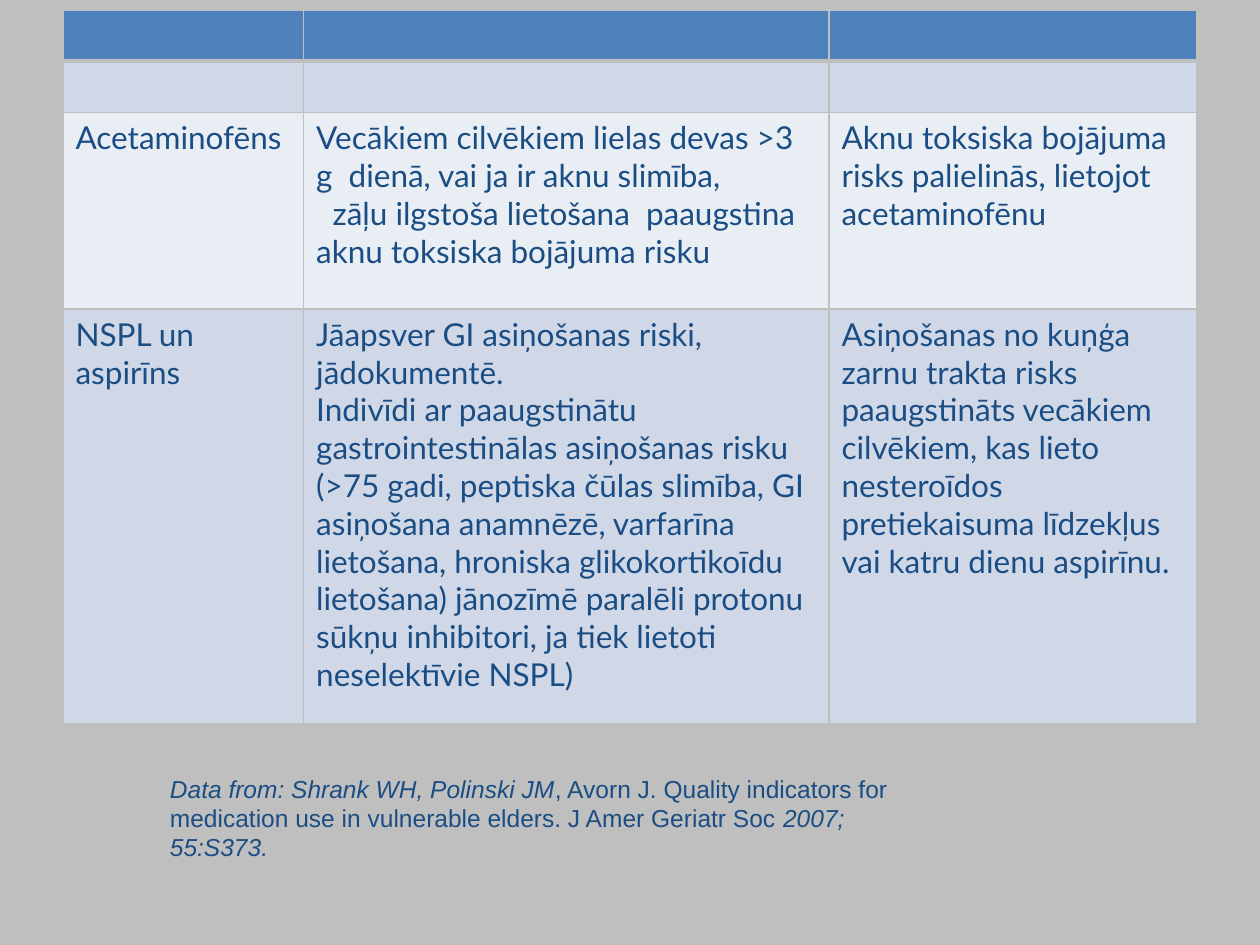
from lxml.etree import SubElement
from pptx import Presentation
from pptx.dml.color import RGBColor
from pptx.enum.text import MSO_AUTO_SIZE
from pptx.oxml.ns import qn
from pptx.util import Inches, Pt

COLORS = {
    "background": "BFBFBF",
    "text": "1A4D83",
    "header": "4F81BD",
    "band_dark": "D0D8E8",
    "band_light": "E9EDF4",
}
COLUMN_WIDTHS = [1.91, 4.17, 2.92]
ROW_HEIGHTS = [0.4, 0.4, 1.56, 3.29]
ROW_FILLS = ["header", "band_dark", "band_light", "band_dark"]
EMPTY_ROW = [[""], [""], [""]]
DRUG_ROWS = [
    EMPTY_ROW,
    EMPTY_ROW,
    [
        ["Acetaminofēns"],
        ["Vecākiem cilvēkiem lielas devas >3 g  dienā, vai ja ir aknu slimība,",
         "zāļu ilgstoša lietošana  paaugstina aknu toksiska bojājuma risku"],
        ["Aknu toksiska bojājuma risks palielinās, lietojot acetaminofēnu"],
    ],
    [
        ["NSPL un aspirīns"],
        ["Jāapsver GI asiņošanas riski, jādokumentē.",
         "Indivīdi ar paaugstinātu gastrointestinālas asiņošanas risku "
         "(>75 gadi, peptiska čūlas slimība, GI asiņošana anamnēzē, varfarīna "
         "lietošana, hroniska glikokortikoīdu lietošana) jānozīmē paralēli "
         "protonu sūkņu inhibitori, ja tiek lietoti neselektīvie NSPL)"],
        ["Asiņošanas no kuņģa zarnu trakta risks paaugstināts vecākiem "
         "cilvēkiem, kas lieto nesteroīdos pretiekaisuma līdzekļus",
         "vai katru dienu aspirīnu."],
    ],
]
CITATION = [
    ("Data from: Shrank WH, Polinski JM", True),
    (", Avorn J. Quality indicators for medication use in vulnerable elders. "
     "J Amer Geriatr Soc ", False),
    ("2007; 55:S373.", True),
]


class SlideBuilder:
    def __init__(self, deck):
        self.slide = deck.slides.add_slide(deck.slide_layouts[6])
        self.fill(self.slide.background.fill, "background")

    def fill(self, fill, color):
        fill.solid()
        fill.fore_color.rgb = RGBColor.from_string(COLORS[color])

    def style(self, font, name, size, italic=None):
        font.name, font.size, font.italic = name, Pt(size), italic
        font.color.rgb = RGBColor.from_string(COLORS["text"])

    def borders(self, cell, bottom_width):
        """Draw the four cell borders; they must precede the cell fill."""
        properties = cell._tc.get_or_add_tcPr()
        for side, width in (("L", 1), ("R", 1), ("T", 1), ("B", bottom_width)):
            line = SubElement(properties, qn(f"a:ln{side}"), w=str(Pt(width)))
            solid = SubElement(line, qn("a:solidFill"))
            SubElement(solid, qn("a:srgbClr"), val=COLORS["background"])

    def table(self, rows, left, top):
        frame = self.slide.shapes.add_table(
            len(rows), len(COLUMN_WIDTHS), Inches(left), Inches(top),
            Inches(sum(COLUMN_WIDTHS)), Inches(sum(ROW_HEIGHTS)))
        table = frame.table
        for column, width in zip(table.columns, COLUMN_WIDTHS):
            column.width = Inches(width)
        for index, (row, height) in enumerate(zip(table.rows, ROW_HEIGHTS)):
            row.height = Inches(height)
            for cell, lines in zip(row.cells, rows[index]):
                self.borders(cell, 3 if index == 0 else 1)
                self.fill(cell.fill, ROW_FILLS[index])
                cell.text_frame.text = "\n".join(lines)
                for para in cell.text_frame.paragraphs:
                    for span in para.runs:
                        self.style(span.font, "Lato", 18)
        return table

    def indent_first_line(self, para, indent):
        para._p.get_or_add_pPr().set("indent", str(Inches(indent)))

    def citation(self, spans, left, top, width, height):
        box = self.slide.shapes.add_textbox(
            Inches(left), Inches(top), Inches(width), Inches(height))
        box.text_frame.word_wrap = True
        box.text_frame.auto_size = MSO_AUTO_SIZE.SHAPE_TO_FIT_TEXT
        para = box.text_frame.paragraphs[0]
        for text, italic in spans:
            span = para.add_run()
            span.text = text
            self.style(span.font, "Arial", 14, italic)


def main():
    deck = Presentation()
    deck.slide_width, deck.slide_height = Inches(10), Inches(7.5)
    builder = SlideBuilder(deck)
    table = builder.table(DRUG_ROWS, 0.5, 0.08)
    builder.indent_first_line(table.cell(2, 1).text_frame.paragraphs[1], 0.13)
    builder.citation(CITATION, 1.25, 6.09, 6.25, 0.81)
    deck.save("out.pptx")


if __name__ == "__main__":
    main()
